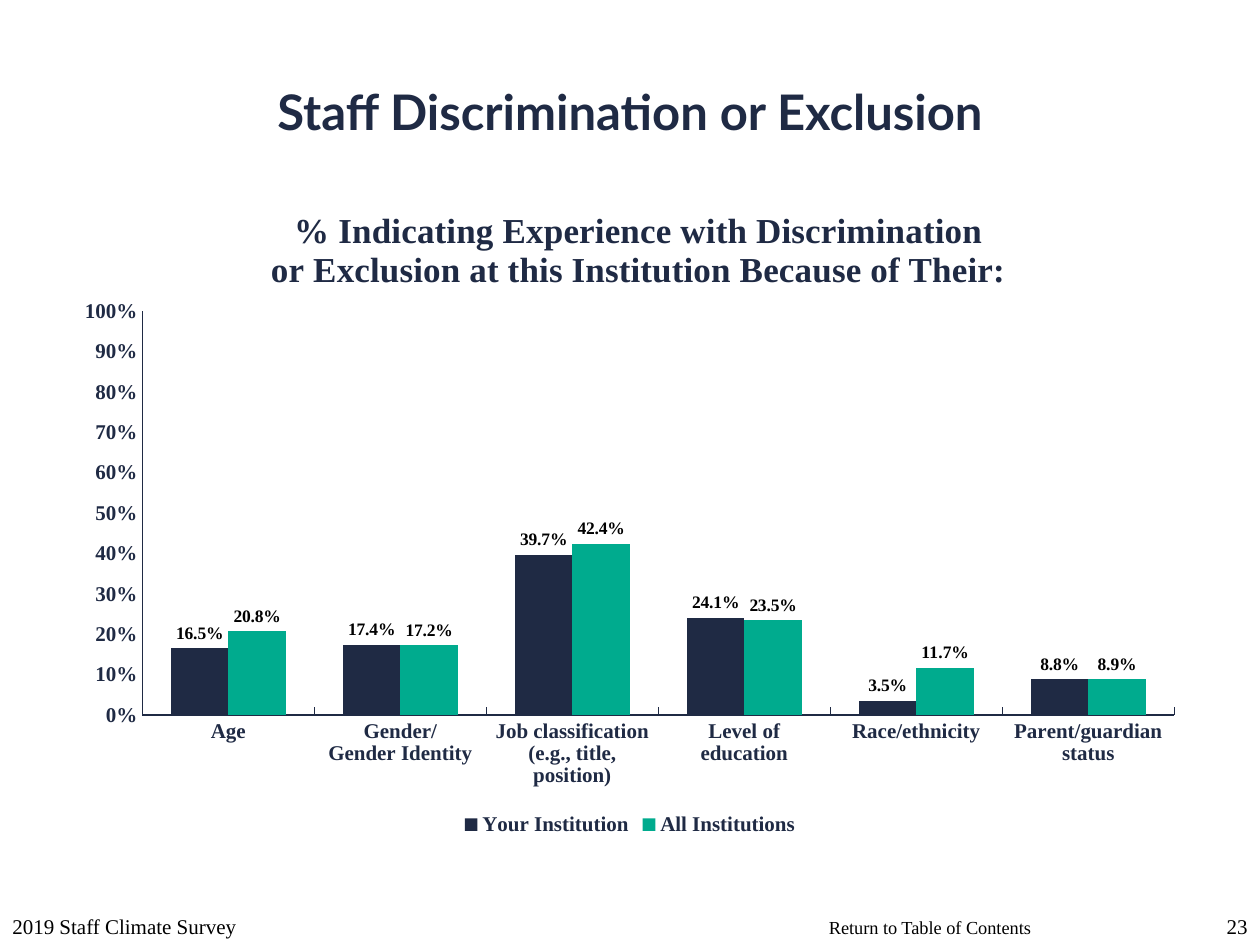
import dataclasses

import pptx
import pptx.chart.data
import pptx.dml.color
import pptx.enum.chart
import pptx.enum.text
import pptx.oxml
import pptx.oxml.ns
import pptx.util

Cm = pptx.util.Cm
ALIGN = pptx.enum.text.PP_ALIGN
ANCHOR = pptx.enum.text.MSO_ANCHOR


@dataclasses.dataclass(frozen=True)
class Theme:
    navy: str = "1F2A44"
    green: str = "00AB8E"
    black: str = "000000"
    heading_font: str = "Lato"
    body_font: str = "Times New Roman"
    title_size: float = 28
    chart_title_size: float = 20
    body_size: float = 12
    link_size: float = 10.5
    label_size: float = 10


def color(value):
    return pptx.dml.color.RGBColor.from_string(value)


def format_font(font, name, size, fill, bold=False):
    font.name = name
    font.size = pptx.util.Pt(size)
    font.bold = bold
    font.color.rgb = color(fill)


def write_text(frame, text, align=ALIGN.LEFT, **style):
    for index, line in enumerate(text.split("\n")):
        paragraph = frame.add_paragraph() if index else frame.paragraphs[0]
        paragraph.alignment = align
        run = paragraph.add_run()
        run.text = line
        format_font(run.font, **style)


def set_layout(parent, before, inner=False, **fractions):
    layout = parent.find(pptx.oxml.ns.qn("c:layout"))
    if layout is not None:
        parent.remove(layout)
    target = '<c:layoutTarget val="inner"/>' if inner else ""
    modes = "".join(f'<c:{key}Mode val="edge"/>' for key in ("x", "y"))
    values = "".join(f'<c:{key} val="{value}"/>' for key, value in fractions.items())
    layout = pptx.oxml.parse_xml(
        f'<c:layout {pptx.oxml.ns.nsdecls("c")}><c:manualLayout>'
        f"{target}{modes}{values}</c:manualLayout></c:layout>"
    )
    parent.insert(before, layout)


class SlideBuilder:
    def __init__(self, slide, theme):
        self.slide = slide
        self.theme = theme

    def body_style(self, size, fill, bold=False):
        return {"name": self.theme.body_font, "size": size, "fill": fill, "bold": bold}

    def title(self, text, left, top, width, height):
        shape = self.slide.shapes.title
        shape.left, shape.top, shape.width, shape.height = left, top, width, height
        shape.text_frame.vertical_anchor = ANCHOR.MIDDLE
        write_text(shape.text_frame, text, ALIGN.CENTER, name=self.theme.heading_font,
                   size=self.theme.title_size, fill=self.theme.navy, bold=True)

    def text(self, text, left, top, width, height, size,
             align=ALIGN.LEFT, anchor=ANCHOR.BOTTOM, wrap=True):
        frame = self.slide.shapes.add_textbox(left, top, width, height).text_frame
        frame.word_wrap = wrap
        frame.vertical_anchor = anchor
        write_text(frame, text, align, **self.body_style(size, self.theme.black))

    def axis(self, axis, tick_mark):
        axis.has_major_gridlines = False
        axis.major_tick_mark = tick_mark
        axis.minor_tick_mark = pptx.enum.chart.XL_TICK_MARK.NONE
        axis.format.line.color.rgb = color(self.theme.navy)
        axis.format.line.width = pptx.util.Pt(0.75)
        format_font(axis.tick_labels.font,
                    **self.body_style(self.theme.body_size, self.theme.navy, True))

    def column_chart(self, title, categories, series, left, top, width, height):
        theme = self.theme
        data = pptx.chart.data.CategoryChartData(number_format="0.0%")
        data.categories = categories
        for name, values, _ in series:
            data.add_series(name, values)
        chart = self.slide.shapes.add_chart(
            pptx.enum.chart.XL_CHART_TYPE.COLUMN_CLUSTERED,
            left, top, width, height, data).chart
        format_font(chart.font, **self.body_style(theme.label_size, theme.navy, True))

        write_text(chart.chart_title.text_frame, title, ALIGN.CENTER,
                   **self.body_style(theme.chart_title_size, theme.navy, True))
        chart.chart_title.include_in_layout = False

        tick_marks = pptx.enum.chart.XL_TICK_MARK
        self.axis(chart.category_axis, tick_marks.INSIDE)
        self.axis(chart.value_axis, tick_marks.NONE)
        chart.value_axis.minimum_scale = 0
        chart.value_axis.maximum_scale = 1
        chart.value_axis.major_unit = 0.1
        chart.value_axis.tick_labels.number_format = "0%"
        chart.value_axis.tick_labels.number_format_is_linked = False

        chart.has_legend = True
        chart.legend.position = pptx.enum.chart.XL_LEGEND_POSITION.BOTTOM
        chart.legend.include_in_layout = False
        format_font(chart.legend.font,
                    **self.body_style(theme.body_size, theme.navy, True))

        plot = chart.plots[0]
        plot.gap_width = 100
        plot.overlap = 0
        plot.vary_by_categories = False
        for column, (_, _, fill) in zip(plot.series, series):
            column.format.fill.solid()
            column.format.fill.fore_color.rgb = color(fill)
            labels = column.data_labels
            labels.show_value = True
            labels.position = pptx.enum.chart.XL_LABEL_POSITION.OUTSIDE_END
            labels.number_format = "0.0%"
            labels.number_format_is_linked = False
            format_font(labels.font,
                        **self.body_style(theme.label_size, theme.black, True))

        plot_area = chart.element.find(".//" + pptx.oxml.ns.qn("c:plotArea"))
        title_element = chart.element.find(".//" + pptx.oxml.ns.qn("c:title"))
        set_layout(plot_area, 0, inner=True, x=0.07, y=0.2, w=0.91, h=0.61)
        set_layout(title_element, 1, x=0.18, y=0.04)


def main():
    theme = Theme()
    presentation = pptx.Presentation()
    presentation.slide_width = Cm(25.4)
    presentation.slide_height = Cm(19.05)
    slide = presentation.slides.add_slide(presentation.slide_layouts[5])
    builder = SlideBuilder(slide, theme)

    builder.title("Staff Discrimination or Exclusion", Cm(0), Cm(0.64), Cm(25.4), Cm(3.18))
    builder.column_chart(
        "% Indicating Experience with Discrimination\n"
        "or Exclusion at this Institution Because of Their:",
        ["Age", "Gender/\nGender Identity", "Job classification (e.g., title, position)",
         "Level of education", "Race/ethnicity", "Parent/guardian status"],
        [("Your Institution", [0.165, 0.174, 0.397, 0.241, 0.035, 0.088], theme.navy),
         ("All Institutions", [0.208, 0.172, 0.424, 0.235, 0.117, 0.089], theme.green)],
        Cm(1.27), Cm(3.61), Cm(22.86), Cm(13.34))
    builder.text("Return to Table of Contents", Cm(16.46), Cm(18.34), Cm(4.62), Cm(0.71),
                 theme.link_size, anchor=ANCHOR.TOP, wrap=False)
    builder.text("2019 Staff Climate Survey", Cm(0), Cm(17.78), Cm(8.05), Cm(1.27),
                 theme.body_size)
    builder.text("23", Cm(24.13), Cm(17.78), Cm(1.27), Cm(1.27),
                 theme.body_size, align=ALIGN.RIGHT)
    presentation.save("out.pptx")


if __name__ == "__main__":
    main()
